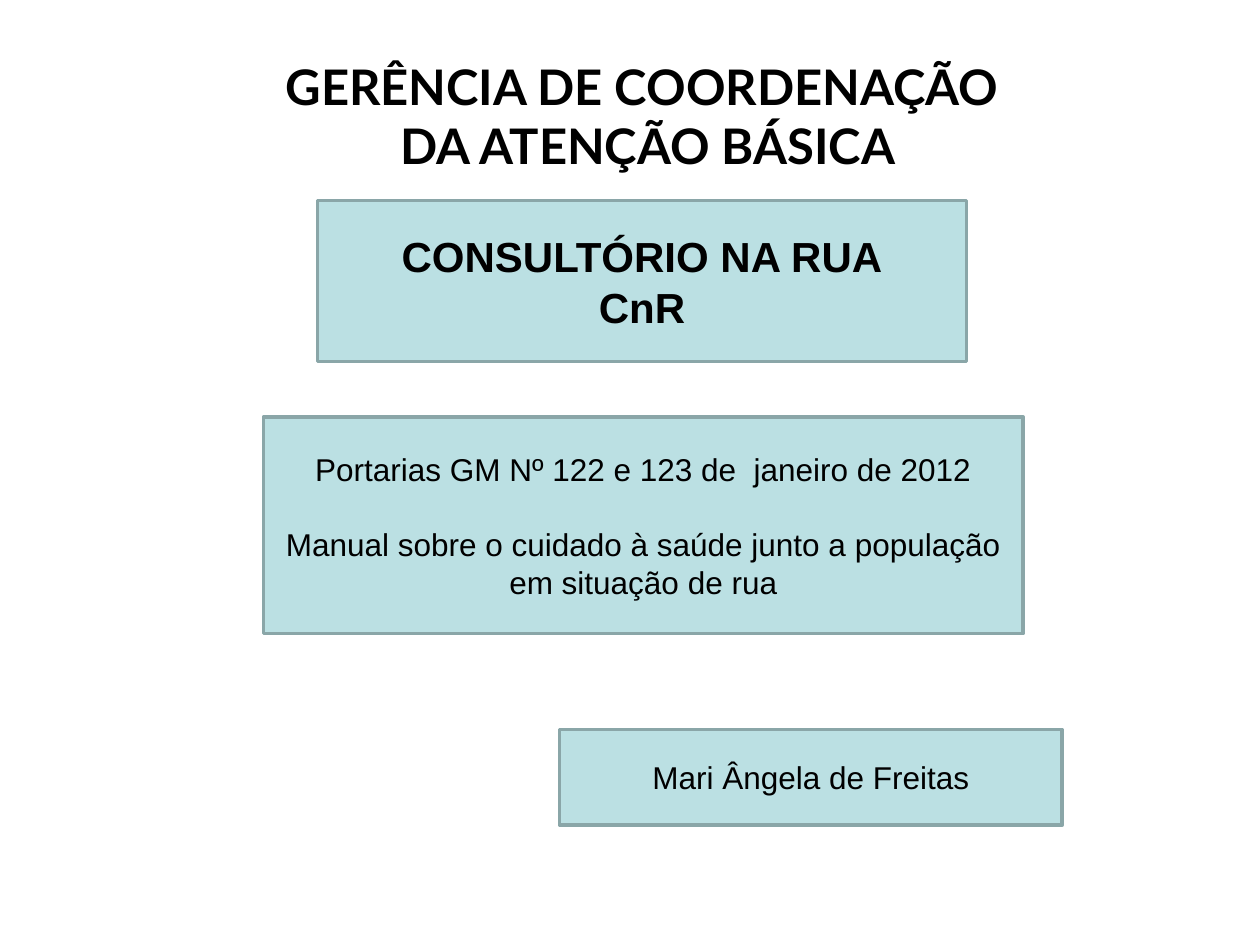
from pptx import Presentation
from pptx.dml.color import RGBColor
from pptx.enum.shapes import MSO_SHAPE
from pptx.enum.text import MSO_ANCHOR, PP_ALIGN
from pptx.util import Inches, Pt

BLACK = RGBColor(0x00, 0x00, 0x00)
PALE_TEAL = RGBColor(0xBB, 0xE0, 0xE3)
TEAL_GREY = RGBColor(0x8A, 0xA6, 0xA8)

TITLE_FORMAT = {"name": "Lato", "size": Pt(28), "bold": True}
HEADING_FORMAT = {"name": "Arial", "size": Pt(24), "bold": True}
BODY_FORMAT = {"name": "Arial", "size": Pt(18), "bold": False}


def write_lines(shape, lines, font_format, anchor, gap=0):
    """Fill a shape with centred paragraphs, separated by gap points."""
    text_frame = shape.text_frame
    text_frame.word_wrap = True
    text_frame.vertical_anchor = anchor
    text_frame.text = "\n".join(lines)
    for index, paragraph in enumerate(text_frame.paragraphs):
        paragraph.alignment = PP_ALIGN.CENTER
        paragraph.space_before = Pt(gap if index else 0)
        for name, value in font_format.items():
            setattr(paragraph.font, name, value)
        paragraph.font.color.rgb = BLACK


presentation = Presentation()
presentation.slide_width = Inches(10)
presentation.slide_height = Inches(7.5)
slide = presentation.slides.add_slide(presentation.slide_layouts[5])

# Title
title = slide.shapes.title
title.left, title.top = Inches(1.97), Inches(0.4)
title.width, title.height = Inches(6.34), Inches(1.04)
write_lines(title, ["GERÊNCIA DE COORDENAÇÃO ", "DA ATENÇÃO BÁSICA"],
            TITLE_FORMAT, MSO_ANCHOR.TOP)

# Boxes: subject, references, author
boxes = [
    ((2.52, 1.59, 5.15, 1.28), ["CONSULTÓRIO NA RUA", "CnR"], HEADING_FORMAT, 0),
    ((2.09, 3.31, 6.03, 1.72),
     ["Portarias GM Nº 122 e 123 de  janeiro de 2012",
      "Manual sobre o cuidado à saúde junto a população em situação de rua"],
     BODY_FORMAT, 21),
    ((4.44, 5.79, 3.99, 0.76), ["Mari Ângela de Freitas"], BODY_FORMAT, 0),
]
for position, lines, font_format, gap in boxes:
    box = slide.shapes.add_shape(MSO_SHAPE.RECTANGLE, *map(Inches, position))
    box.shadow.inherit = False
    box.fill.solid()
    box.fill.fore_color.rgb = PALE_TEAL
    box.line.color.rgb = TEAL_GREY
    box.line.width = Pt(2)
    write_lines(box, lines, font_format, MSO_ANCHOR.MIDDLE, gap)

presentation.save("out.pptx")
